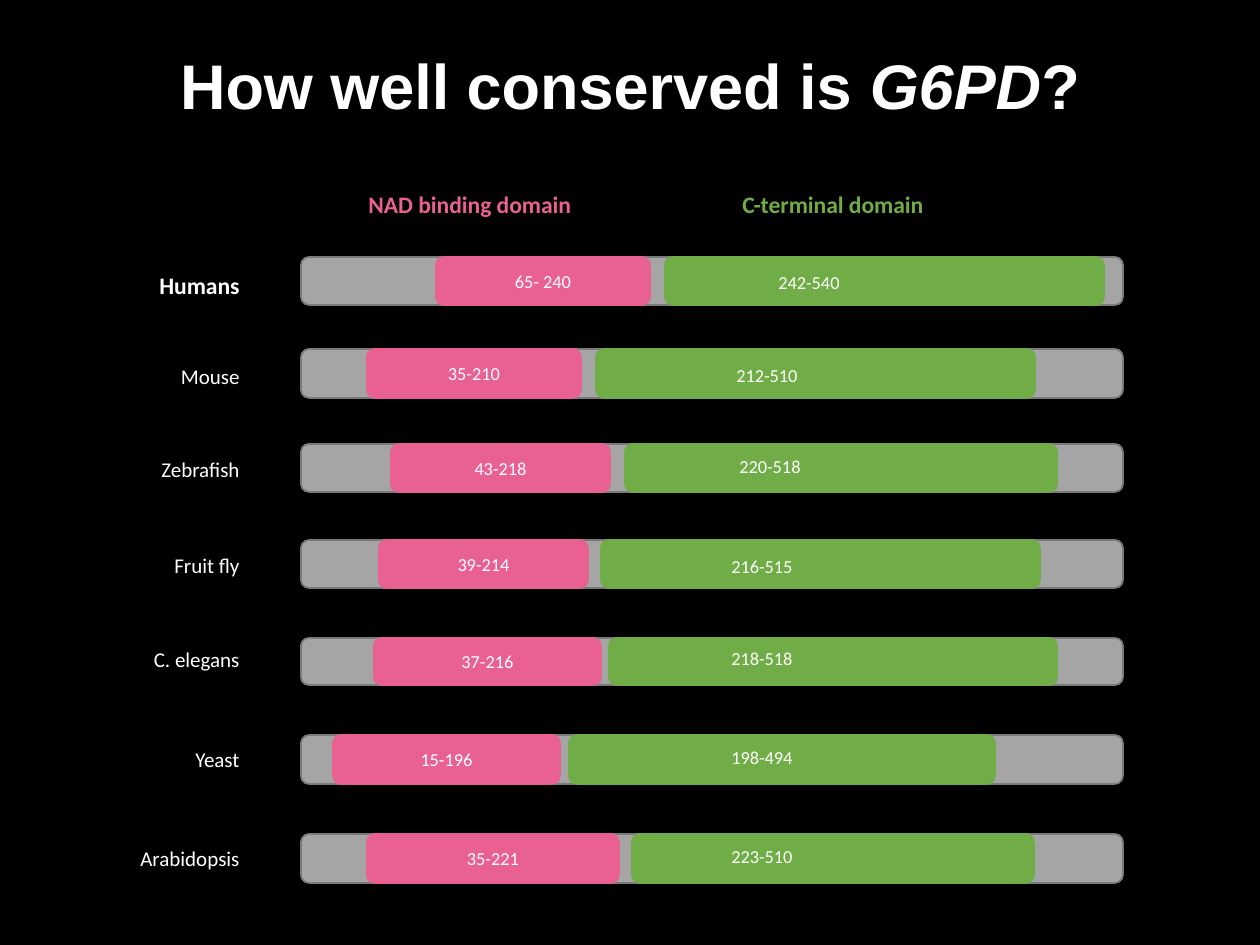
from pptx import Presentation
from pptx.dml.color import RGBColor
from pptx.enum.shapes import MSO_SHAPE
from pptx.enum.text import MSO_ANCHOR, PP_ALIGN
from pptx.util import Pt

WHITE = RGBColor(0xFF, 0xFF, 0xFF)
BLACK = RGBColor(0x00, 0x00, 0x00)
GREY = RGBColor(0xA5, 0xA5, 0xA5)
GREY_EDGE = RGBColor(0x7A, 0x7A, 0x7A)
PINK = RGBColor(0xE9, 0x61, 0x92)
GREEN = RGBColor(0x70, 0xAD, 0x47)

# Content: text runs with the formats that apply to each
TITLE = [("How well conserved is ", {}), ("G6PD", {"italic": True}), ("?", {})]
HEADINGS = [  # text, left, width, colour
    ("NAD binding domain", 356, 284, PINK),
    ("C-terminal domain", 730, 258, GREEN),
]
# organism, bar top, bar height, name top,
# NAD domain (range, left, width),
# C-terminal domain (range, left, width, label centre, label top)
PROTEINS = [
    ("Humans", 257, 48, 265, ("65- 240", 436, 214), ("242-540", 665, 439, 809, 265)),
    ("Mouse", 349, 49, 357, ("35-210", 367, 214), ("212-510", 596, 439, 767, 358)),
    ("Zebrafish", 444, 48, 450, ("43-218", 391, 219), ("220-518", 625, 432, 770, 449)),
    ("Fruit fly", 540, 48, 546, ("39-214", 379, 209), ("216-515", 601, 439, 762, 549)),
    ("C. elegans", 638, 47, 640, ("37-216", 374, 227), ("218-518", 609, 448, 762, 641)),
    ("Yeast", 735, 49, 740, ("15-196", 333, 227), ("198-494", 569, 426, 762, 740)),
    ("Arabidopsis", 834, 49, 839, ("35-221", 367, 252), ("223-510", 632, 402, 762, 839)),
]
BAR_LEFT, BAR_WIDTH = 301, 822
NAME_LEFT, NAME_WIDTH = 112, 140
LABEL_WIDTH, LABEL_HEIGHT = 108, 42
PX = 914400 / 126


def px(*lengths):
    return [round(length * PX) for length in lengths]


def write(frame, runs, size, align, anchor, font="Calibri", **formats):
    frame.word_wrap = True
    frame.vertical_anchor = anchor
    paragraph = frame.paragraphs[0]
    paragraph.alignment = align
    for text, extra in runs:
        run = paragraph.add_run()
        run.text = text
        run.font.color.rgb = formats.get("color", WHITE)
        values = {"name": font, "size": Pt(size), "bold": formats.get("bold", False)}
        for key, value in {**values, **extra}.items():
            setattr(run.font, key, value)
    return paragraph


def add_label(box, text, size, align, **formats):
    frame = slide.shapes.add_textbox(*px(*box)).text_frame
    write(frame, [(text, {})], size, align, MSO_ANCHOR.TOP, **formats)


def add_bar(box, fill, edge):
    bar = slide.shapes.add_shape(MSO_SHAPE.ROUNDED_RECTANGLE, *px(*box))
    bar.shadow.inherit = False
    bar.fill.solid()
    bar.fill.fore_color.rgb = fill
    bar.line.color.rgb = edge
    bar.line.width = Pt(1)
    return bar


deck = Presentation()
deck.slide_width, deck.slide_height = px(1260, 945)
slide = deck.slides.add_slide(deck.slide_layouts[6])
slide.background.fill.solid()
slide.background.fill.fore_color.rgb = BLACK

# Title
title = slide.shapes.add_textbox(*px(0, 0, 1260, 129)).text_frame
write(title, TITLE, 36, PP_ALIGN.CENTER, MSO_ANCHOR.BOTTOM,
      font="Arial", bold=True).line_spacing = 0.9

# Domain headings
for heading, left, width, color in HEADINGS:
    add_label((left, 184, width, 49), heading, 13.5, PP_ALIGN.LEFT, color=color, bold=True)

# One protein bar per organism, with its two domains
for row, (organism, top, height, name_top, nad, c_terminal) in enumerate(PROTEINS):
    reference = row == 0
    add_label((NAME_LEFT, name_top, NAME_WIDTH, 38), organism,
              13.5 if reference else 12, PP_ALIGN.RIGHT, bold=reference)
    add_bar((BAR_LEFT, top, BAR_WIDTH, height), GREY, GREY_EDGE)

    nad_range, left, width = nad
    nad_bar = add_bar((left, top, width, height), PINK, PINK)
    write(nad_bar.text_frame, [(nad_range, {})], 10.5, PP_ALIGN.CENTER, MSO_ANCHOR.MIDDLE)

    c_range, left, width, centre, label_top = c_terminal
    add_bar((left, top, width, height), GREEN, GREEN)
    add_label((centre - LABEL_WIDTH / 2, label_top, LABEL_WIDTH, LABEL_HEIGHT),
              c_range, 10.5, PP_ALIGN.CENTER)

deck.save("out.pptx")
